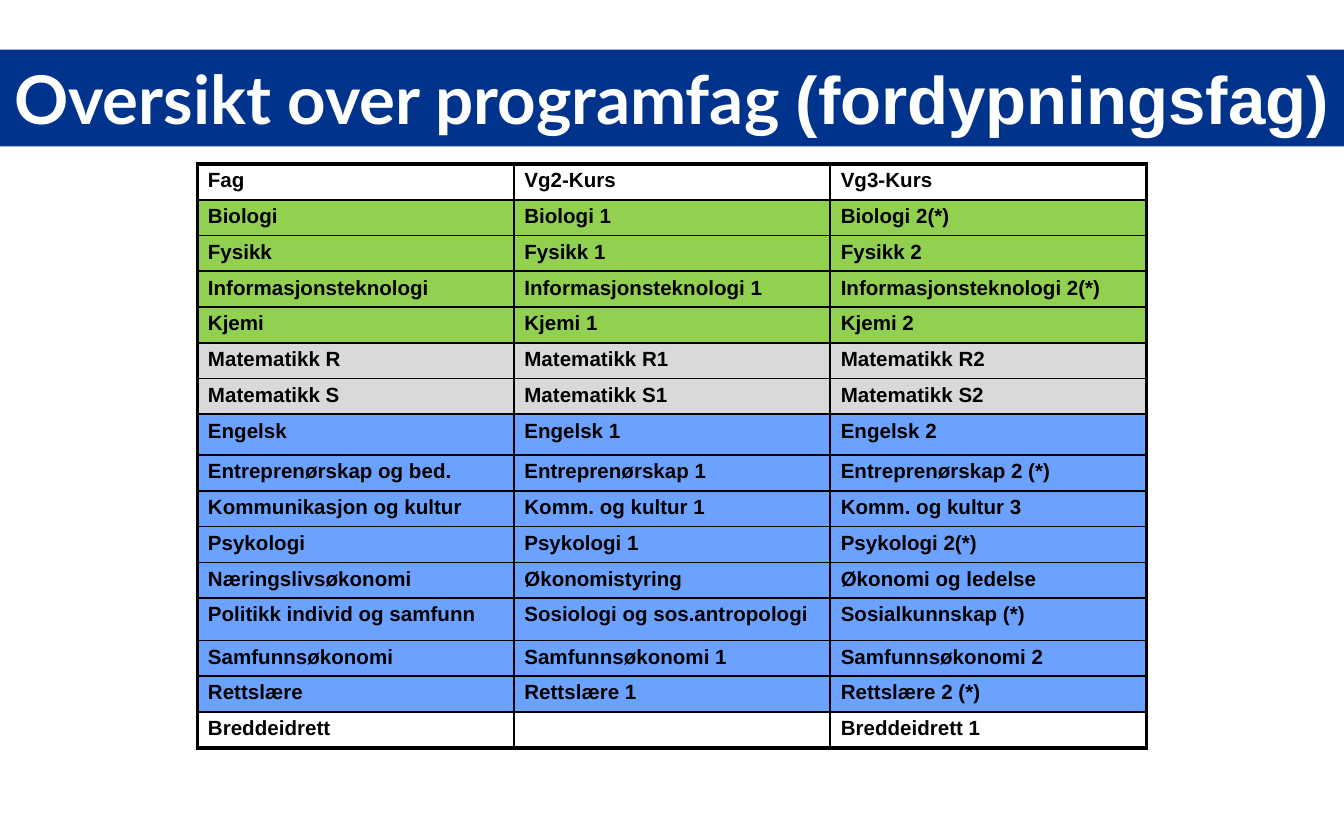
from lxml.etree import SubElement
from pptx import Presentation
from pptx.dml.color import RGBColor
from pptx.enum.shapes import MSO_SHAPE as Shape
from pptx.enum.text import MSO_ANCHOR as Anchor, PP_ALIGN as Align
from pptx.oxml.ns import qn
from pptx.util import Cm, Pt

NAVY = RGBColor(0x00, 0x33, 0x8C)
WHITE = RGBColor(0xFF, 0xFF, 0xFF)
BLACK = RGBColor(0x00, 0x00, 0x00)
GREEN = RGBColor(0x92, 0xD0, 0x50)
GREY = RGBColor(0xD9, 0xD9, 0xD9)
BLUE = RGBColor(0x6B, 0xA1, 0xFF)

OUTER_LINE = Pt(2.25)
INNER_LINE = Pt(1)

# Subject, Vg2 course and Vg3 course, grouped by row colour
GROUPS = [
    (WHITE, [("Fag", "Vg2-Kurs", "Vg3-Kurs")]),
    (GREEN, [
        ("Biologi", "Biologi 1", "Biologi 2(*)"),
        ("Fysikk", "Fysikk 1", "Fysikk 2"),
        ("Informasjonsteknologi", "Informasjonsteknologi 1", "Informasjonsteknologi 2(*)"),
        ("Kjemi", "Kjemi 1", "Kjemi 2"),
    ]),
    (GREY, [
        ("Matematikk R", "Matematikk R1", "Matematikk R2"),
        ("Matematikk S", "Matematikk S1", "Matematikk S2"),
    ]),
    (BLUE, [
        ("Engelsk", "Engelsk 1", "Engelsk 2"),
        ("Entreprenørskap og bed.", "Entreprenørskap 1", "Entreprenørskap 2 (*)"),
        ("Kommunikasjon og kultur", "Komm. og kultur 1", "Komm. og kultur 3"),
        ("Psykologi", "Psykologi 1", "Psykologi 2(*)"),
        ("Næringslivsøkonomi", "Økonomistyring", "Økonomi og ledelse"),
        ("Politikk individ og samfunn", "Sosiologi og sos.antropologi", "Sosialkunnskap (*)"),
        ("Samfunnsøkonomi", "Samfunnsøkonomi 1", "Samfunnsøkonomi 2"),
        ("Rettslære", "Rettslære 1", "Rettslære 2 (*)"),
    ]),
    (WHITE, [("Breddeidrett", "", "Breddeidrett 1")]),
]
ROWS = [(colour, texts) for colour, group in GROUPS for texts in group]
TALL_ROWS = {"Engelsk": Cm(0.77), "Politikk individ og samfunn": Cm(0.8)}


def style_run(run, font_name, size, colour):
    run.font.name = font_name
    run.font.size = size
    run.font.bold = True
    run.font.color.rgb = colour


def add_border(cell, side, width):
    line = SubElement(cell._tc.get_or_add_tcPr(), qn(f"a:ln{side}"), w=str(width))
    fill = SubElement(line, qn("a:solidFill"))
    SubElement(fill, qn("a:srgbClr"), val=str(BLACK))


presentation = Presentation()
presentation.slide_width = Cm(25.4)
presentation.slide_height = Cm(15.88)
slide = presentation.slides.add_slide(presentation.slide_layouts[6])

# Title band
band = slide.shapes.add_shape(
    Shape.RECTANGLE, 0, Cm(0.94), presentation.slide_width, Cm(1.83))
band.shadow.inherit = False
band.fill.solid()
band.fill.fore_color.rgb = NAVY
band.line.fill.background()
text_frame = band.text_frame
text_frame.word_wrap = False
text_frame.vertical_anchor = Anchor.MIDDLE
text_frame.margin_left = text_frame.margin_right = Cm(0.2)
text_frame.margin_top = text_frame.margin_bottom = Cm(0.1)
paragraph = text_frame.paragraphs[0]
paragraph.alignment = Align.CENTER
for text, font_name in [("Oversikt over programfag ", "Lato"), ("(fordypningsfag)", "Arial")]:
    run = paragraph.add_run()
    run.text = text
    style_run(run, font_name, Pt(36), WHITE)

# Course table: the plain rows share the height the tall rows leave
table_height = Cm(11.04)
plain_height = (table_height - sum(TALL_ROWS.values())) // (len(ROWS) - len(TALL_ROWS))
table = slide.shapes.add_table(
    len(ROWS), 3, Cm(3.73), Cm(3.1), Cm(17.94), table_height).table
table.first_row = False
table.horz_banding = False
last_row, last_column = len(ROWS) - 1, 2

for row_index, (colour, texts) in enumerate(ROWS):
    table.rows[row_index].height = TALL_ROWS.get(texts[0], plain_height)
    for column_index, text in enumerate(texts):
        cell = table.cell(row_index, column_index)
        cell.margin_left = cell.margin_right = Cm(0.2)
        cell.margin_top = cell.margin_bottom = Cm(0.1)

        # Thick lines around the table, thin lines inside it
        edges = {"L": column_index == 0, "R": column_index == last_column,
                 "T": row_index == 0, "B": row_index == last_row}
        for side, is_outer in edges.items():
            add_border(cell, side, OUTER_LINE if is_outer else INNER_LINE)
        cell.fill.solid()
        cell.fill.fore_color.rgb = colour

        paragraph = cell.text_frame.paragraphs[0]
        if text:
            paragraph.text = text
            style_run(paragraph.runs[0], "Arial", Pt(11), BLACK)
        else:
            # Small text size keeps the empty cell from stretching its row
            SubElement(paragraph._p, qn("a:endParaRPr"), sz="1100")

presentation.save("out.pptx")
